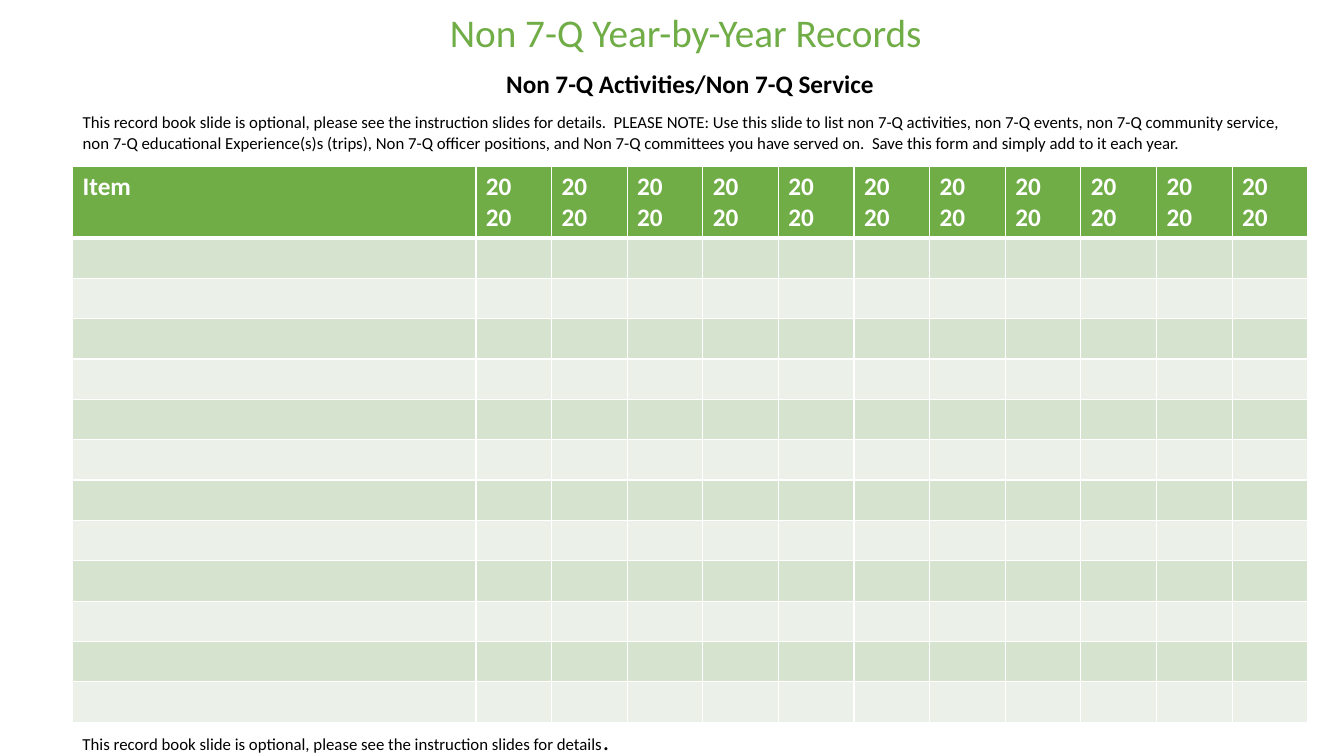
from lxml.etree import SubElement
from pptx import Presentation
from pptx.dml.color import RGBColor
from pptx.enum.text import MSO_ANCHOR as Anchor, MSO_AUTO_SIZE as AutoSize, PP_ALIGN as Align
from pptx.oxml.ns import qn
from pptx.util import Inches, Pt

COLORS = {"green": "70AD47", "band": "D5E3CF", "pale": "EBF1E9",
          "white": "FFFFFF", "black": "000000"}
FONT = "Calibri"
LEFT, WIDTH = 0.72, 12.25
YEARS, ENTRY_ROWS = 11, 12

HEADING = "Non 7-Q Year-by-Year Records "
SUBHEADING = "Non 7-Q Activities/Non 7-Q Service"
INSTRUCTIONS = (
    "This record book slide is optional, please see the instruction slides for details.  "
    "PLEASE NOTE: Use this slide to list non 7-Q activities, non 7-Q events, non 7-Q "
    "community service, non 7-Q educational Experience(s)s (trips), Non 7-Q officer "
    "positions, and Non 7-Q committees you have served on.  Save this form and simply "
    "add to it each year.")
REMINDER = "This record book slide is optional, please see the instruction slides for details"


class RecordSlide:
    def __init__(self, deck):
        self.slide = deck.slides.add_slide(deck.slide_layouts[5])

    def style(self, font, size, color="black", bold=False):
        for name, value in {"name": FONT, "size": Pt(size), "bold": bold}.items():
            setattr(font, name, value)
        font.color.rgb = RGBColor.from_string(COLORS[color])

    def place(self, shape, left, top, width, height):
        box = {"left": left, "top": top, "width": width, "height": height}
        for name, value in box.items():
            setattr(shape, name, Inches(value))
        frame_format = {"word_wrap": True, "vertical_anchor": Anchor.TOP,
                        "auto_size": AutoSize.SHAPE_TO_FIT_TEXT}
        for name, value in frame_format.items():
            setattr(shape.text_frame, name, value)

    def title(self, box, lines):
        """Fill the title placeholder; each line is (text, alignment, font style)."""
        heading = self.slide.shapes.title
        self.place(heading, *box)
        frame = heading.text_frame
        frame.text = "\n".join(text for text, _, _ in lines)
        for paragraph, (_, align, font_style) in zip(frame.paragraphs, lines):
            spacing = {"alignment": align, "line_spacing": 1.07, "space_after": Pt(8)}
            for name, value in spacing.items():
                setattr(paragraph, name, value)
            self.style(paragraph.runs[0].font, **font_style)

    def note(self, box, parts):
        """Add a one-paragraph text box from (text, size) parts."""
        note = self.slide.shapes.add_textbox(*map(Inches, box))
        self.place(note, *box)
        for text, size in parts:
            run = note.text_frame.paragraphs[0].add_run()
            run.text = text
            self.style(run.font, size)

    def borders(self, cell, top, bottom):
        """Draw white cell borders; top and bottom widths are in points."""
        properties = cell._tc.get_or_add_tcPr()
        for side, width in {"L": 1, "R": 1, "T": top, "B": bottom}.items():
            line = SubElement(properties, qn(f"a:ln{side}"), w=str(Pt(width)))
            fill = SubElement(line, qn("a:solidFill"))
            SubElement(fill, qn("a:srgbClr"), val=COLORS["white"])

    def table(self, box, headers, column_widths, row_heights):
        frame = self.slide.shapes.add_table(
            len(row_heights), len(headers), *map(Inches, box))
        table = frame.table
        for column, width in zip(table.columns, column_widths):
            column.width = Inches(width)
        for index, (row, height) in enumerate(zip(table.rows, row_heights)):
            row.height = Inches(height)
            color = "green" if index == 0 else "band" if index % 2 else "pale"
            for cell in row.cells:
                self.borders(cell, 3 if index == 1 else 1, 3 if index == 0 else 1)
                cell.fill.solid()
                cell.fill.fore_color.rgb = RGBColor.from_string(COLORS[color])
        for cell, header in zip(table.rows[0].cells, headers):
            cell.text = header
            for paragraph in cell.text_frame.paragraphs:
                self.style(paragraph.runs[0].font, 18, "white", bold=True)


def main():
    deck = Presentation()
    deck.slide_width, deck.slide_height = Inches(13.33), Inches(7.5)
    records = RecordSlide(deck)
    records.title((LEFT, 0, WIDTH, 2.55), [
        (HEADING, Align.CENTER, {"size": 28, "color": "green"}),
        (SUBHEADING, Align.CENTER, {"size": 18, "bold": True}),
        (INSTRUCTIONS, Align.LEFT, {"size": 12}),
    ])
    records.table((LEFT, 1.65, WIDTH, 5.51),
                  headers=["Item"] + ["20\n20"] * YEARS,
                  column_widths=[4] + [0.75] * YEARS,
                  row_heights=[0.71] + [0.36] * ENTRY_ROWS)
    records.note((LEFT, 7.15, 10.44, 0.71), [(REMINDER, 12), (".", 18)])
    deck.save("out.pptx")


if __name__ == "__main__":
    main()
